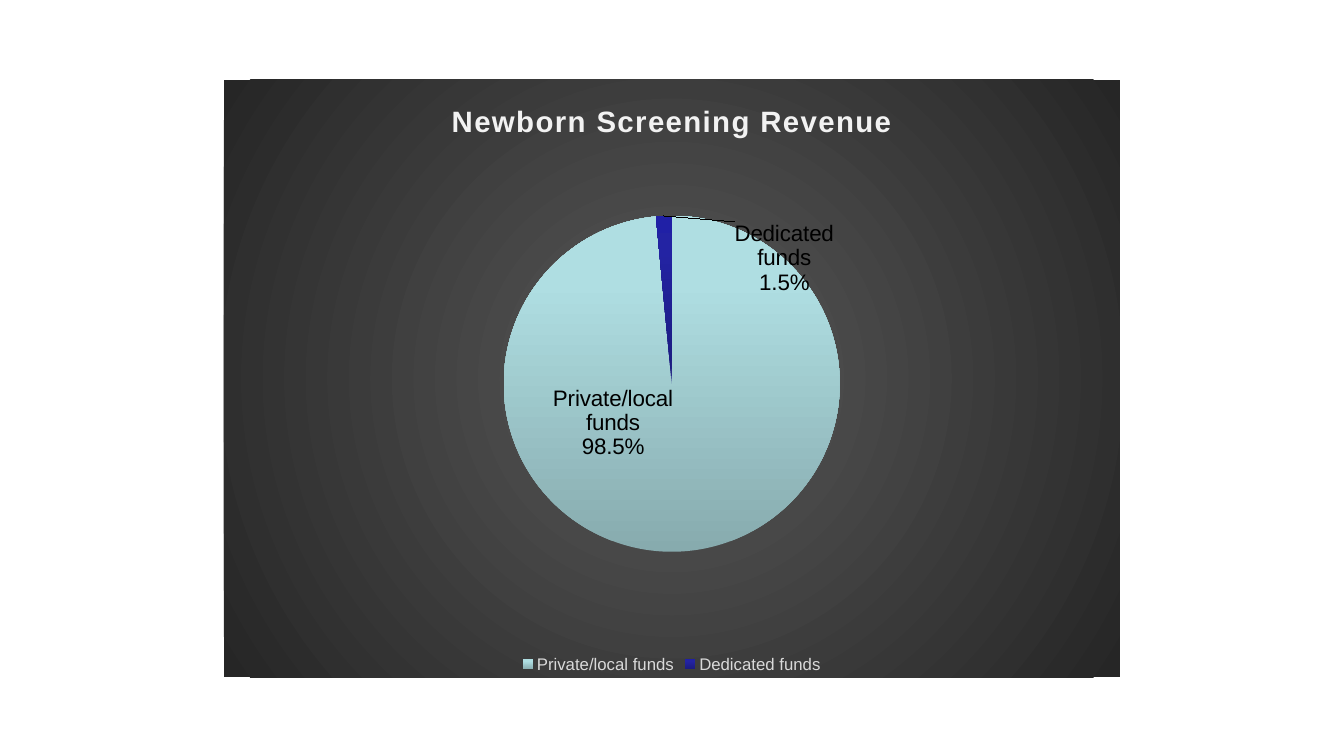
"""Build a slide with a pie chart of newborn screening revenue."""
from copy import deepcopy

from lxml.etree import SubElement
from pptx import Presentation
from pptx.chart.data import CategoryChartData
from pptx.dml.color import RGBColor
from pptx.enum.chart import XL_CHART_TYPE as ChartType
from pptx.enum.chart import XL_LABEL_POSITION as LabelPosition
from pptx.enum.chart import XL_LEGEND_POSITION as LegendPosition
from pptx.oxml import parse_xml
from pptx.oxml.ns import nsdecls, qn
from pptx.util import Cm, Pt


def style(font, size, color, bold=False):
    font.name, font.size, font.bold = "Arial", Pt(size), bold
    font.color.rgb = RGBColor.from_string(color)


def gradient(stops, direction):
    marks = "".join(
        f'<a:gs pos="{place * 1000}"><a:srgbClr val="{color}"/></a:gs>'
        for place, color in stops
    )
    return parse_xml(
        f'<a:gradFill {nsdecls("a")} rotWithShape="1">'
        f"<a:gsLst>{marks}</a:gsLst>{direction}</a:gradFill>"
    )


UPWARD = '<a:lin ang="16200000" scaled="0"/>'
RADIAL = '<a:path path="circle"><a:fillToRect l="50000" t="50000" r="50000" b="50000"/></a:path>'
FUNDS = [
    ("Private/local funds", 0.985, ("87ABAE", "AFDEE2", "AFE0E4"), (-0.07, -0.075)),
    ("Dedicated funds", 0.015, ("1B1B7E", "2323A3", "2020A6"), (0.13, -0.07)),
]

deck = Presentation()
deck.slide_width, deck.slide_height = Cm(33.87), Cm(19.05)
page = deck.slides.add_slide(deck.slide_layouts[6])

data = CategoryChartData(number_format="0.0%")
data.categories = [fund[0] for fund in FUNDS]
data.add_series("Series 1", [fund[1] for fund in FUNDS])
chart = page.shapes.add_chart(
    ChartType.PIE, Cm(5.64), Cm(2.01), Cm(22.58), Cm(15.06), data
).chart
style(chart.font, 10, "000000")

background = parse_xml(f'<c:spPr {nsdecls("c")}/>')
background.append(gradient([(0, "595959"), (100, "262626")], RADIAL))
SubElement(SubElement(background, qn("a:ln")), qn("a:noFill"))
chart._chartSpace.find(qn("c:chart")).addnext(background)

chart.has_title = True
span = chart.chart_title.text_frame.paragraphs[0].add_run()
span.text = "Newborn Screening Revenue"
style(span.font, 21, "F2F2F2", bold=True)
span._r.get_or_add_rPr().set("spc", "100")
chart.chart_title.include_in_layout = False

chart.has_legend = True
chart.legend.position = LegendPosition.BOTTOM
chart.legend.include_in_layout = False
style(chart.legend.font, 12, "D9D9D9")

plot = chart.plots[0]
plot.vary_by_categories = True
plot_area = chart._chartSpace.find(qn("c:chart")).find(qn("c:plotArea"))
for old_layout in plot_area.findall(qn("c:layout")):
    plot_area.remove(old_layout)
plot_area.insert(0, parse_xml(
    f'<c:layout {nsdecls("c")}><c:manualLayout><c:layoutTarget val="inner"/>'
    '<c:xMode val="edge"/><c:yMode val="edge"/><c:x val="0.3125"/><c:y val="0.2275"/>'
    '<c:w val="0.375"/><c:h val="0.5625"/></c:manualLayout></c:layout>'
))

series = plot.series[0]
labels = series.data_labels
labels.show_value = False
labels.show_category_name = labels.show_percentage = True
labels.number_format, labels.number_format_is_linked = "0.0%", False
labels.position = LabelPosition.CENTER
style(labels.font, 16, "000000")
label_list = labels._element
separator = parse_xml(f'<c:separator {nsdecls("c")}>\n</c:separator>')
last_switch = label_list.find(qn("c:showBubbleSize"))
if last_switch is None:
    last_switch = label_list.find(qn("c:showPercent"))
last_switch.addnext(separator)
shared = [part for part in label_list if part.tag != qn("c:showLeaderLines")]

for index, (name, share, colors, (shift_x, shift_y)) in enumerate(FUNDS):
    slice_format = series._element.get_or_add_dPt_for_point(index).get_or_add_spPr()
    slice_format.append(gradient(zip((0, 80, 100), colors), UPWARD))
    label = parse_xml(
        f'<c:dLbl {nsdecls("c")}><c:idx val="{index}"/><c:layout><c:manualLayout>'
        f'<c:x val="{shift_x}"/><c:y val="{shift_y}"/></c:manualLayout></c:layout></c:dLbl>'
    )
    label.extend(deepcopy(part) for part in shared)
    label_list.insert(index, label)

deck.save("out.pptx")
